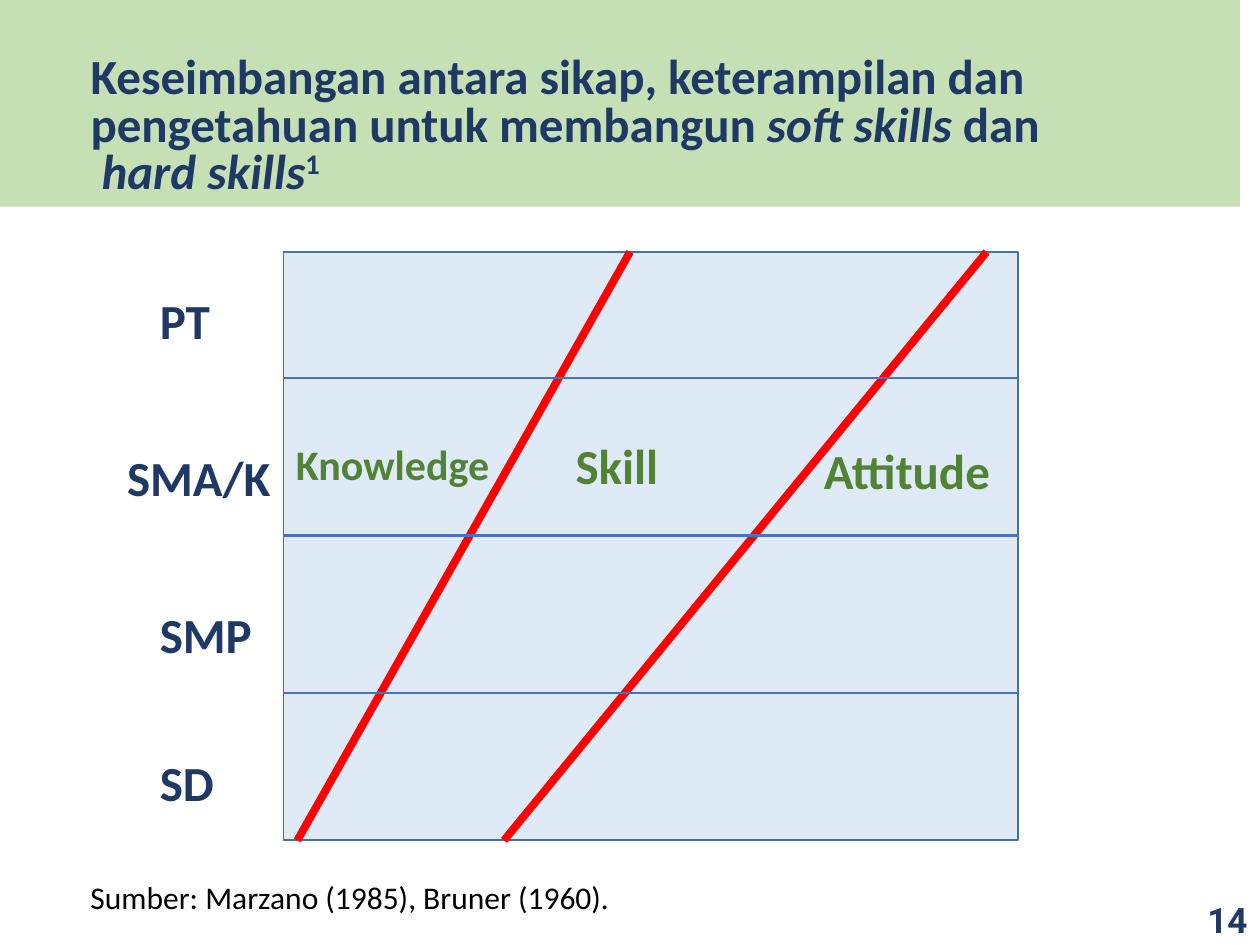
from typing import NamedTuple

from lxml.etree import SubElement
from pptx import Presentation
from pptx.dml.color import RGBColor
from pptx.enum.shapes import MSO_CONNECTOR, MSO_SHAPE
from pptx.enum.text import MSO_ANCHOR, MSO_AUTO_SIZE, PP_ALIGN
from pptx.oxml.ns import qn
from pptx.util import Emu, Pt

PX = 9144  # 100 px to the inch
HUES = {
    "band": "C5E0B4", "navy": "203864", "pale": "DEEBF7", "edge": "43739E",
    "red": "FF0000", "blue": "4472C4", "green": "548235", "black": "000000",
}
LEFT, TOP, WIDE, HIGH = 225, 200, 583, 467  # the grid


class Box(NamedTuple):
    x: int
    y: int
    w: int
    h: int


class Run(NamedTuple):
    text: str
    form: dict = {}
    base: int = 0


class Label(NamedTuple):
    text: str
    box: Box
    hue: str
    size: int = 28


class Line(NamedTuple):
    x1: int
    y1: int
    x2: int
    y2: int
    hue: str
    width: float


def px(*nums: int) -> list:
    return [Emu(n * PX) for n in nums]


def tint(name: str) -> RGBColor:
    return RGBColor.from_string(HUES[name])


def put(item, form: dict) -> None:
    for key, value in form.items():
        setattr(item, key, value)


def draw_rect(slide, box: Box, fill: str, edge: str = "") -> None:
    rect = slide.shapes.add_shape(MSO_SHAPE.RECTANGLE, *px(*box))
    rect.shadow.inherit = False
    rect.fill.solid()
    rect.fill.fore_color.rgb = tint(fill)
    if edge:
        rect.line.color.rgb = tint(edge)
        rect.line.width = Pt(1)
    else:
        rect.line.fill.background()


def draw_line(slide, line: Line) -> None:
    ends = px(line.x1, line.y1, line.x2, line.y2)
    link = slide.shapes.add_connector(MSO_CONNECTOR.STRAIGHT, *ends)
    link.line.color.rgb = tint(line.hue)
    link.line.width = Pt(line.width)
    SubElement(link._element.spPr, qn("a:effectLst"))


def draw_text(slide, box: Box, runs: list, hue: str, font: dict,
              frame: dict, para: dict = {}) -> None:
    area = slide.shapes.add_textbox(*px(*box)).text_frame
    put(area, frame)
    first = area.paragraphs[0]
    put(first, para)
    for run in runs:
        if run.text == "\n":
            first.add_line_break()
            continue
        part = first.add_run()
        part.text = run.text
        put(part.font, font | run.form)
        part.font.color.rgb = tint(hue)
        if run.base:
            part._r.get_or_add_rPr().set("baseline", str(run.base * 1000))


def draw_label(slide, label: Label) -> None:
    font = {"name": "Calibri", "size": Pt(label.size), "bold": True}
    draw_text(slide, label.box, [Run(label.text)], label.hue, font, GROW)


GROW = {"word_wrap": False, "auto_size": MSO_AUTO_SIZE.SHAPE_TO_FIT_TEXT}
MID = {"word_wrap": True, "vertical_anchor": MSO_ANCHOR.MIDDLE}
SLANT = {"italic": True}

TITLE = [
    Run("Keseimbangan antara sikap, keterampilan dan pengetahuan untuk membangun "),
    Run("soft skills ", SLANT),
    Run("dan"),
    Run("\n"),
    Run(" "),
    Run("hard skills", SLANT),
    Run("1", base=30),
]
SLOPES = [
    Line(400, TOP + HIGH, 783, TOP, "red", 4.5),
    Line(236, TOP + HIGH, 500, TOP, "red", 4.5),
]
ROWS = [Line(LEFT, y, LEFT + WIDE, y, "blue", 1.5) for y in (550, 425, 300)]
AREAS = [
    Label("Attitude", Box(644, 345, 155, 57), "green"),
    Label("Skill", Box(447, 341, 87, 57), "green"),
    Label("Knowledge", Box(225, 343, 175, 50), "green", 24),
]
LEVELS = [
    Label("SD", Box(117, 592, 63, 57), "navy"),
    Label("SMP", Box(117, 475, 94, 57), "navy"),
    Label("SMA/K", Box(91, 350, 135, 57), "navy"),
    Label("PT", Box(117, 226, 60, 57), "navy"),
]


def main() -> None:
    deck = Presentation()
    deck.slide_width, deck.slide_height = px(1000, 750)
    slide = deck.slides.add_slide(deck.slide_layouts[6])

    # Title band
    draw_rect(slide, Box(0, 0, 984, 164), "band")
    draw_text(slide, Box(62, 39, 922, 125), TITLE, "navy",
              {"name": "Calibri", "size": Pt(28), "bold": True},
              MID, {"line_spacing": 0.8})

    # Grid with slopes, areas and school levels
    draw_rect(slide, Box(LEFT, TOP, WIDE, HIGH), "pale", "edge")
    for line in SLOPES:
        draw_line(slide, line)
    for label in AREAS:
        draw_label(slide, label)
    for line in ROWS:
        draw_line(slide, line)
    for label in LEVELS:
        draw_label(slide, label)

    # Source and page number
    draw_text(slide, Box(62, 692, 877, 40),
              [Run("Sumber: Marzano (1985), Bruner (1960).")], "black",
              {"name": "Calibri", "size": Pt(18)}, GROW | {"word_wrap": True})
    draw_text(slide, Box(892, 710, 108, 40), [Run("14")], "navy",
              {"name": "Roboto", "size": Pt(20), "bold": True},
              MID, {"alignment": PP_ALIGN.RIGHT})

    deck.save("out.pptx")


if __name__ == "__main__":
    main()
